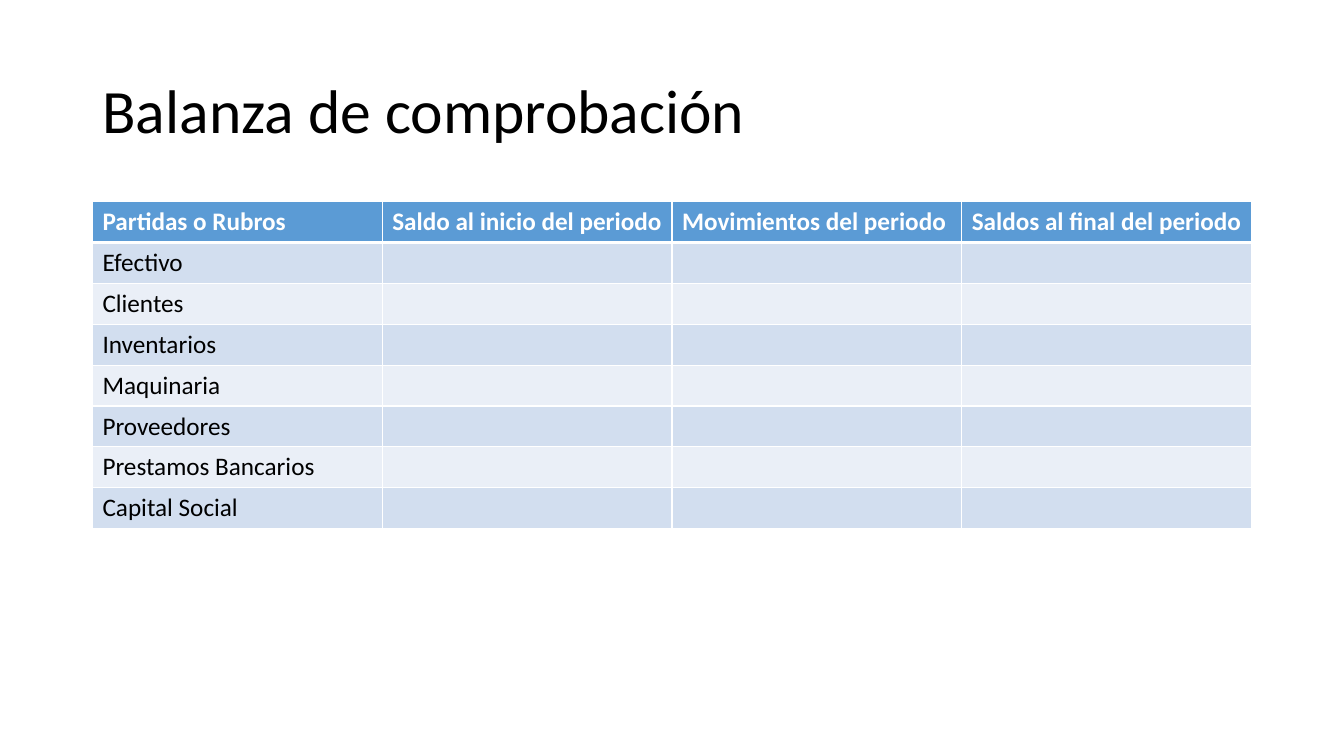
import lxml.etree
import pptx
import pptx.dml.color
import pptx.enum.text
import pptx.oxml.ns
import pptx.util
from pptx.util import Cm, Pt

TITLE = "Balanza de comprobación"
HEADERS = [
    "Partidas o Rubros",
    "Saldo al inicio del periodo",
    "Movimientos del periodo",
    "Saldos al final del periodo",
]
ACCOUNTS = [
    "Efectivo",
    "Clientes",
    "Inventarios",
    "Maquinaria",
    "Proveedores",
    "Prestamos Bancarios",
    "Capital Social",
]

WHITE, BLACK = "FFFFFF", "000000"
HEADER_FILL = "5B9BD5"
BAND_FILLS = ["D2DEEF", "EAEFF7"]
TITLE_FORMAT = {"name": "Calibri", "size": Pt(44), "bold": False}
HEADER_FORMAT = {"name": "Calibri", "size": Pt(18), "bold": True}
BODY_FORMAT = {"name": "Calibri", "size": Pt(18), "bold": False}

LEFT, WIDTH = Cm(2.33), Cm(29.21)
TITLE_TOP, TITLE_HEIGHT = Cm(1.01), Cm(3.68)
TABLE_TOP, ROW_HEIGHT = Cm(5.08), Cm(1.03)
THIN, THICK = Pt(1), Pt(3)


def color(hex_string):
    return pptx.dml.color.RGBColor.from_string(hex_string)


def format_font(font, values, font_color):
    for name, value in values.items():
        setattr(font, name, value)
    font.color.rgb = color(font_color)


def add_borders(cell, top, bottom):
    """Draw white borders; call before the fill so the XML order is valid."""
    properties = cell._tc.get_or_add_tcPr()
    widths = {"lnL": THIN, "lnR": THIN, "lnT": top, "lnB": bottom}
    for tag, width in widths.items():
        line = lxml.etree.SubElement(
            properties, pptx.oxml.ns.qn(f"a:{tag}"), w=str(int(width))
        )
        fill = lxml.etree.SubElement(line, pptx.oxml.ns.qn("a:solidFill"))
        lxml.etree.SubElement(fill, pptx.oxml.ns.qn("a:srgbClr"), val=WHITE)


def add_title(slide):
    title = slide.shapes.title
    title.left, title.top = LEFT, TITLE_TOP
    title.width, title.height = WIDTH, TITLE_HEIGHT
    frame = title.text_frame
    frame.text = TITLE
    frame.word_wrap = True
    frame.vertical_anchor = pptx.enum.text.MSO_ANCHOR.MIDDLE
    paragraph = frame.paragraphs[0]
    paragraph.alignment = pptx.enum.text.PP_ALIGN.LEFT
    paragraph.line_spacing = 0.9
    format_font(paragraph.runs[0].font, TITLE_FORMAT, BLACK)


def add_balance_table(slide):
    rows = [HEADERS] + [[account] + [""] * (len(HEADERS) - 1) for account in ACCOUNTS]
    table = slide.shapes.add_table(
        len(rows), len(HEADERS), LEFT, TABLE_TOP, WIDTH, ROW_HEIGHT * len(rows)
    ).table
    for row_index, texts in enumerate(rows):
        table.rows[row_index].height = ROW_HEIGHT
        is_header = row_index == 0
        fill = HEADER_FILL if is_header else BAND_FILLS[(row_index - 1) % 2]
        values = HEADER_FORMAT if is_header else BODY_FORMAT
        for column_index, text in enumerate(texts):
            cell = table.cell(row_index, column_index)
            add_borders(
                cell,
                top=THICK if row_index == 1 else THIN,
                bottom=THICK if is_header else THIN,
            )
            cell.fill.solid()
            cell.fill.fore_color.rgb = color(fill)
            cell.text = text
            format_font(
                cell.text_frame.paragraphs[0].font, values, WHITE if is_header else BLACK
            )
            for run in cell.text_frame.paragraphs[0].runs:
                format_font(run.font, values, WHITE if is_header else BLACK)


def main():
    presentation = pptx.Presentation()
    presentation.slide_width = Cm(33.87)
    presentation.slide_height = Cm(19.05)
    slide = presentation.slides.add_slide(presentation.slide_layouts[5])
    add_title(slide)
    add_balance_table(slide)
    presentation.save("out.pptx")


if __name__ == "__main__":
    main()
